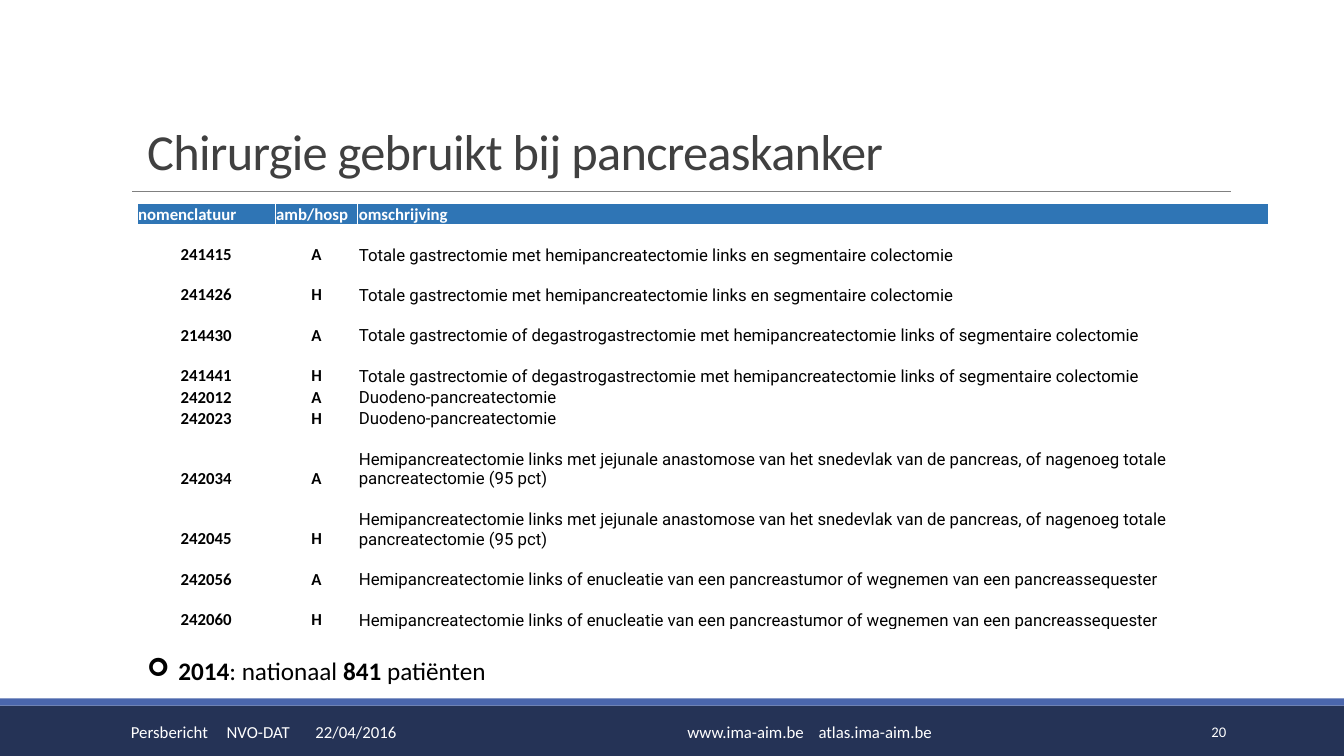
"""Build the slide on surgery used for pancreatic cancer."""
import pptx
import pptx.util
import pptx.oxml
import pptx.oxml.ns
import pptx.dml.color
import pptx.enum.shapes
import pptx.enum.text
from lxml import etree

Inches = pptx.util.Inches
Pt = pptx.util.Pt
ALIGN = pptx.enum.text.PP_ALIGN
ANCHOR = pptx.enum.text.MSO_ANCHOR
COLORS = {"navy": "253356", "blue": "4A66AC", "header": "2F75B5", "rule": "808080",
          "title": "404040", "black": "000000", "white": "FFFFFF"}


def color(name):
    return pptx.dml.color.RGBColor.from_string(COLORS[name])


def add_run(paragraph, text, shade, **formats):
    run = paragraph.add_run()
    run.text = text
    for name, value in {"name": "Calibri", "size": Pt(12), "bold": False, **formats}.items():
        setattr(run.font, name, value)
    run.font.color.rgb = color(shade)
    return run


presentation = pptx.Presentation()
presentation.slide_width = Inches(13.33)
presentation.slide_height = Inches(7.5)
slide = presentation.slides.add_slide(presentation.slide_layouts[5])

for top, height, shade in [(7, 0.5, "navy"), (6.93, 0.07, "blue")]:
    band = slide.shapes.add_shape(pptx.enum.shapes.MSO_SHAPE.RECTANGLE,
                                  0, Inches(top), Inches(13.33), Inches(height))
    band.shadow.inherit = False
    band.fill.solid()
    band.fill.fore_color.rgb = color(shade)
    band.line.fill.background()

rule = slide.shapes.add_connector(pptx.enum.shapes.MSO_CONNECTOR.STRAIGHT,
                                  Inches(1.31), Inches(1.9), Inches(12.21), Inches(1.9))
rule.line.color.rgb = color("rule")
rule.line.width = Pt(0.5)
etree.SubElement(rule._element.spPr, pptx.oxml.ns.qn("a:effectLst"))

title = slide.shapes.title
title.left, title.top, title.width, title.height = map(Inches, (1.36, 0.25, 11, 1.59))
title.text_frame.vertical_anchor = ANCHOR.BOTTOM
title.text_frame.auto_size = pptx.enum.text.MSO_AUTO_SIZE.NONE
title.text_frame.word_wrap = True
heading = title.text_frame.paragraphs[0]
heading.alignment = ALIGN.LEFT
heading.line_spacing = 0.85
heading_run = add_run(heading, "Chirurgie gebruikt bij pancreaskanker", "title", size=Pt(36))
heading_run.font._element.set("spc", "-50")

footers = [
    (1.2, 4.03, "Persbericht\tNVO-DAT\t22/04/2016", 12, ALIGN.LEFT, (0.95, 1.83)),
    (6.72, 3.94, "www.ima-aim.be\tatlas.ima-aim.be", 12, ALIGN.LEFT, (1.3,)),
    (10.83, 1.43, "20", 10.5, ALIGN.RIGHT, ()),
]
for left, width, text, size, alignment, stops in footers:
    footer = slide.shapes.add_textbox(Inches(left), Inches(7.06), Inches(width), Inches(0.4))
    footer.text_frame.word_wrap = True
    footer.text_frame.vertical_anchor = ANCHOR.MIDDLE
    paragraph = footer.text_frame.paragraphs[0]
    paragraph.alignment = alignment
    if stops:
        tabs = etree.SubElement(paragraph._p.get_or_add_pPr(), pptx.oxml.ns.qn("a:tabLst"))
        for stop in stops:
            etree.SubElement(tabs, pptx.oxml.ns.qn("a:tab"), pos=str(Inches(stop)), algn="l")
    add_run(paragraph, text, "white", size=Pt(size))

procedures = [
    ("241415", "241426", 0.4,
     "Totale gastrectomie met hemipancreatectomie links en segmentaire colectomie"),
    ("214430", "241441", 0.4,
     "Totale gastrectomie of degastrogastrectomie met hemipancreatectomie links"
     " of segmentaire colectomie"),
    ("242012", "242023", 0.2, "Duodeno-pancreatectomie"),
    ("242034", "242045", 0.6,
     "Hemipancreatectomie links met jejunale anastomose van het snedevlak van de pancreas,"
     " of nagenoeg totale pancreatectomie (95 pct)"),
    ("242056", "242060", 0.4,
     "Hemipancreatectomie links of enucleatie van een pancreastumor"
     " of wegnemen van een pancreassequester"),
]
rows = [(0.2, ("nomenclatuur", "amb/hosp", "omschrijving"))]
for ambulatory, hospital, height, description in procedures:
    rows.append((height, (ambulatory, "A", description)))
    rows.append((height, (hospital, "H", description)))

table = slide.shapes.add_table(len(rows), 3, Inches(1.36), Inches(2.02),
                               Inches(11.22), Inches(4.22)).table
table.first_row = False
table.horz_banding = False
for column, width in zip(table.columns, (1.37, 0.82, 9.03)):
    column.width = Inches(width)
cell_formats = {"margin_left": Inches(0.01), "margin_right": Inches(0.01),
                "margin_top": Inches(0.01), "margin_bottom": 0,
                "vertical_anchor": ANCHOR.BOTTOM}
for row_index, (height, texts) in enumerate(rows):
    table.rows[row_index].height = Inches(height)
    is_header = row_index == 0
    for column_index, text in enumerate(texts):
        cell = table.cell(row_index, column_index)
        for name, value in cell_formats.items():
            setattr(cell, name, value)
        if is_header:
            cell.fill.solid()
            cell.fill.fore_color.rgb = color("header")
        else:
            cell.fill.background()
        is_description = column_index == 2 and not is_header
        paragraph = cell.text_frame.paragraphs[0]
        paragraph.alignment = ALIGN.LEFT if is_header or is_description else ALIGN.CENTER
        add_run(paragraph, text, "white" if is_header else "black",
                name="Roboto" if is_description else "Calibri", bold=not is_description)

summary = slide.shapes.add_textbox(Inches(1.36), Inches(6.45), Inches(7.45), Inches(0.4))
summary.text_frame.word_wrap = True
summary.text_frame.auto_size = pptx.enum.text.MSO_AUTO_SIZE.SHAPE_TO_FIT_TEXT
paragraph = summary.text_frame.paragraphs[0]
properties = paragraph._p.get_or_add_pPr()
properties.set("marL", str(Inches(0.31)))
properties.set("indent", str(-Inches(0.31)))
etree.SubElement(properties, pptx.oxml.ns.qn("a:buFont"), typeface="Wingdings")
etree.SubElement(properties, pptx.oxml.ns.qn("a:buChar"), char="➢")
for text, bold in [("2014", True), (": nationaal ", False), ("841", True), (" patiënten", False)]:
    add_run(paragraph, text, "black", size=Pt(18), bold=bold)

presentation.save("out.pptx")
